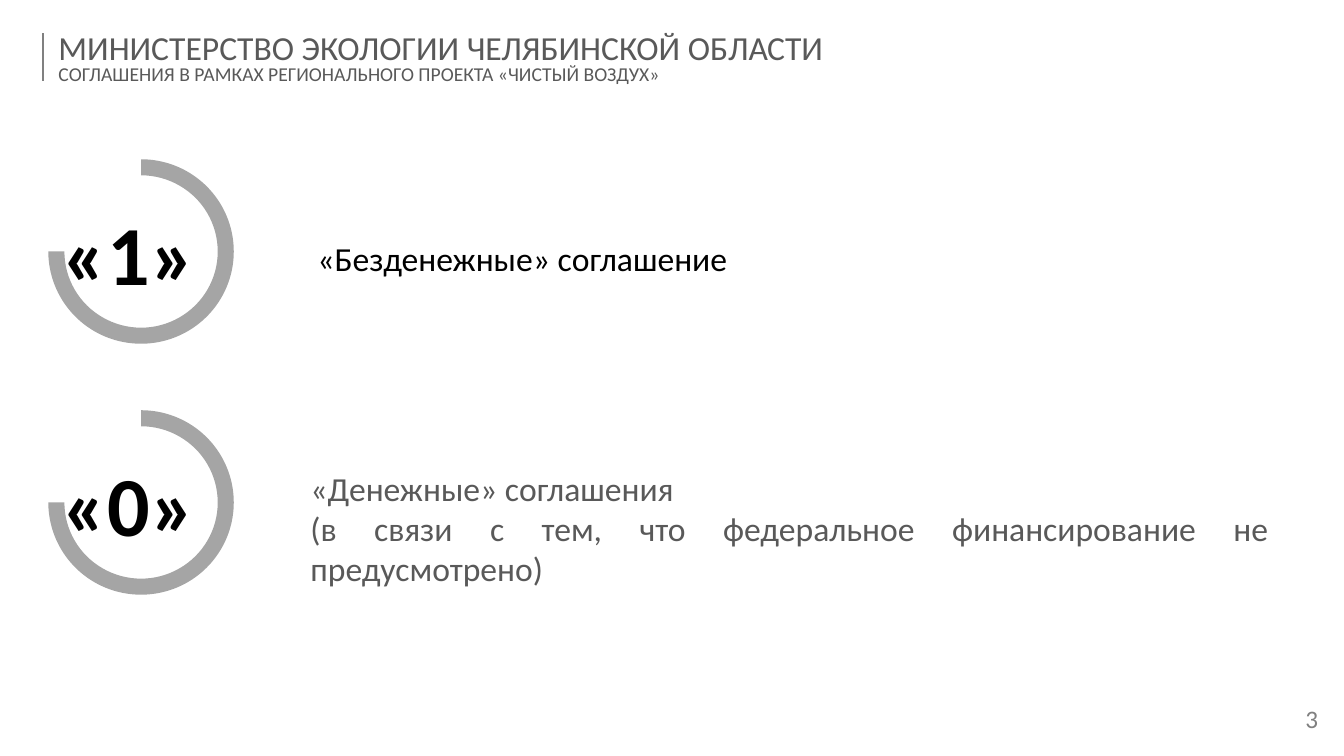
from lxml import etree
from pptx import Presentation
from pptx.dml.color import RGBColor
from pptx.enum.shapes import MSO_CONNECTOR, MSO_SHAPE
from pptx.enum.text import MSO_ANCHOR, MSO_AUTO_SIZE, PP_ALIGN
from pptx.oxml.ns import qn
from pptx.util import Inches, Pt

SLIDE_WIDTH, SLIDE_HEIGHT = Inches(13.33), Inches(7.5)
TITLE_ONLY_LAYOUT = 5
LEFT, CENTER, JUSTIFY = PP_ALIGN.LEFT, PP_ALIGN.CENTER, PP_ALIGN.JUSTIFY
TOP, MIDDLE = MSO_ANCHOR.TOP, MSO_ANCHOR.MIDDLE
NO_AUTOFIT = MSO_AUTO_SIZE.NONE
STRAIGHT, BLOCK_ARC = MSO_CONNECTOR.STRAIGHT, MSO_SHAPE.BLOCK_ARC

FONT = "Calibri"
BLACK, DARK_GRAY, GRAY, RING_GRAY = "000000", "595959", "808080", "A5A5A5"

# Vertical rhythm of the agreement rows, in percent of the slide height
FIRST_ROW, ROW_PITCH = 21.07, 33.2
RING_HEIGHT = 24.4
# Start angle, end angle (units of 100000/60000 degree), thickness share
RING_ADJUSTMENTS = (162, 108, 0.087)


def color(hex_value):
    return RGBColor.from_string(hex_value)


def across(percent):
    return round(SLIDE_WIDTH * percent / 100)


def down(percent):
    return round(SLIDE_HEIGHT * percent / 100)


def area(left, top, width, height):
    """Turn percentages of the slide into a position and a size."""
    return across(left), down(top), across(width), down(height)


def fill_text(shape, lines, hex_color, alignment, anchor=TOP, spacing=1.0, bold=False):
    """Write (text, size) lines as paragraphs of one shape."""
    frame = shape.text_frame
    frame_format = {"word_wrap": True, "auto_size": NO_AUTOFIT, "vertical_anchor": anchor}
    for name, value in frame_format.items():
        setattr(frame, name, value)
    for index, (text, size) in enumerate(lines):
        paragraph = frame.paragraphs[0] if index == 0 else frame.add_paragraph()
        paragraph.alignment = alignment
        paragraph.line_spacing = spacing
        run = paragraph.add_run()
        run.text = text
        for name, value in {"name": FONT, "size": Pt(size), "bold": bold}.items():
            setattr(run.font, name, value)
        run.font.color.rgb = color(hex_color)


def add_text(slide, box, lines, hex_color, alignment, **text_format):
    shape = slide.shapes.add_textbox(*area(*box))
    fill_text(shape, lines, hex_color, alignment, **text_format)


def add_header(slide):
    rule = slide.shapes.add_connector(
        STRAIGHT, across(3.23), down(4.4), across(3.23), down(10.67))
    rule.line.color.rgb = color(GRAY)
    rule.line.width = Pt(1.5)
    etree.SubElement(rule._element.spPr, qn("a:effectLst"))

    title = slide.shapes.title
    title.left, title.top, title.width, title.height = area(3.6, 3.47, 96.4, 8.93)
    lines = [
        ("МИНИСТЕРСТВО ЭКОЛОГИИ ЧЕЛЯБИНСКОЙ ОБЛАСТИ", 24),
        ("СОГЛАШЕНИЯ В РАМКАХ РЕГИОНАЛЬНОГО ПРОЕКТА «ЧИСТЫЙ ВОЗДУХ»", 14),
    ]
    fill_text(title, lines, DARK_GRAY, LEFT, anchor=MIDDLE, spacing=0.8)


def add_count_ring(slide, row, count):
    """Draw a three-quarter ring with the number of agreements inside."""
    top = FIRST_ROW + row * ROW_PITCH
    ring = slide.shapes.add_shape(BLOCK_ARC, *area(3.6, top, 13.8, RING_HEIGHT))
    for index, value in enumerate(RING_ADJUSTMENTS):
        ring.adjustments[index] = value
    ring.shadow.inherit = False
    ring.fill.solid()
    ring.fill.fore_color.rgb = color(RING_GRAY)
    ring.line.fill.background()
    add_text(slide, (1.13, top, 16.95, RING_HEIGHT), [(count, 60)],
             BLACK, CENTER, anchor=MIDDLE, bold=True)


def main():
    presentation = Presentation()
    presentation.slide_width, presentation.slide_height = SLIDE_WIDTH, SLIDE_HEIGHT
    slide = presentation.slides.add_slide(presentation.slide_layouts[TITLE_ONLY_LAYOUT])

    add_header(slide)
    for row, count in enumerate(("«1»", "«0»")):
        add_count_ring(slide, row, count)

    add_text(slide, (22.88, 30.8, 42.46, 6.67),
             [("«Безденежные» соглашение", 24)], BLACK, JUSTIFY)
    money_lines = [
        ("«Денежные» соглашения", 24),
        ("(в связи с тем, что федеральное финансирование не предусмотрено)", 24),
    ]
    add_text(slide, (22.36, 61.2, 72.77, 17.47), money_lines, DARK_GRAY, JUSTIFY)
    add_text(slide, (95.27, 92, 4.65, 6.67), [("3", 18)], GRAY, CENTER,
             anchor=MIDDLE, spacing=0.8)

    presentation.save("out.pptx")


if __name__ == "__main__":
    main()
